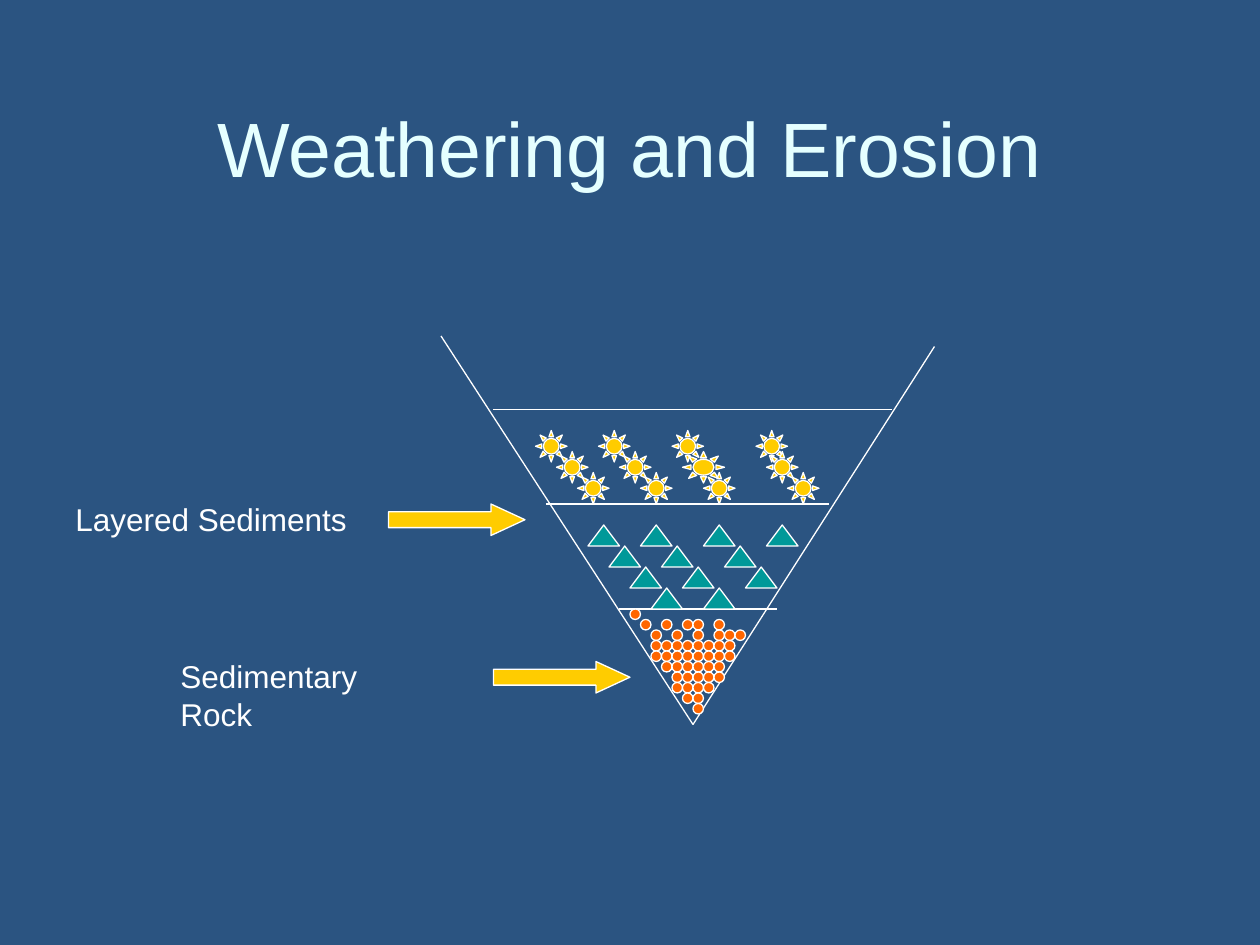
from lxml import etree
from pptx import Presentation
from pptx.dml.color import RGBColor
from pptx.enum.shapes import MSO_CONNECTOR, MSO_SHAPE
from pptx.enum.text import MSO_ANCHOR, MSO_AUTO_SIZE, PP_ALIGN
from pptx.oxml import parse_xml
from pptx.oxml.ns import qn
from pptx.util import Pt

NAVY = RGBColor(0x2B, 0x54, 0x81)
ICE = RGBColor(0xE5, 0xFF, 0xFF)
WHITE = RGBColor(0xFF, 0xFF, 0xFF)
GOLD = RGBColor(0xFF, 0xCC, 0x00)
TEAL = RGBColor(0x00, 0x99, 0x99)
ORANGE = RGBColor(0xFF, 0x66, 0x00)
LINE = MSO_CONNECTOR.STRAIGHT
SUN = MSO_SHAPE.SUN
PEAK = MSO_SHAPE.ISOSCELES_TRIANGLE
DOT = MSO_SHAPE.OVAL
ARROW = MSO_SHAPE.RIGHT_ARROW
FONT = "Arial"
STEP = 6
SHADOW = (
    '<a:effectLst xmlns:a="http://schemas.openxmlformats.org/drawingml/2006/main">'
    '<a:outerShdw blurRad="38100" dist="38100" dir="2700000" algn="tl">'
    '<a:srgbClr val="000000"/></a:outerShdw></a:effectLst>'
)

prs = Presentation()
prs.slide_width, prs.slide_height = Pt(720), Pt(540)
slide = prs.slides.add_slide(prs.slide_layouts[5])
slide.background.fill.solid()
slide.background.fill.fore_color.rgb = NAVY


def add_mark(kind, x, y, w, h, color):
    mark = slide.shapes.add_shape(kind, Pt(x), Pt(y), Pt(w), Pt(h))
    mark.shadow.inherit = False
    mark.fill.solid()
    mark.fill.fore_color.rgb = color
    mark.line.color.rgb = WHITE
    mark.line.width = Pt(0.75)
    return mark


def add_run(frame, text, size, color):
    run = frame.paragraphs[0].add_run()
    run.text = text
    run.font.size = Pt(size)
    run.font.color.rgb = color
    run.font.name = FONT
    return run


# Title with a soft text shadow
title = slide.shapes.title
title.left, title.top, title.width, title.height = Pt(36), Pt(30), Pt(648), Pt(108)
title.text_frame.vertical_anchor = MSO_ANCHOR.MIDDLE
title.text_frame.paragraphs[0].alignment = PP_ALIGN.CENTER
run = add_run(title.text_frame, "Weathering and Erosion", 44, ICE)
run.font.fill._xPr.find(qn("a:solidFill")).addnext(parse_xml(SHADOW))

# Basin walls and layer boundaries
for x1, y1, x2, y2 in (
    (252, 192, 396, 414),
    (396, 414, 534, 198),
    (354, 348, 444, 348),
    (312, 288, 474, 288),
    (282, 234, 510, 234),
):
    edge = slide.shapes.add_connector(LINE, Pt(x1), Pt(y1), Pt(x2), Pt(y2))
    edge.line.color.rgb = WHITE
    edge.line.width = Pt(0.75)
    etree.SubElement(edge._element.spPr, qn("a:effectLst"))

# Top layer: slanting strings of suns, the third with a wide one in front
for xs in ((306, 318, 330), (342, 354, 366), (384, 402), (432, 438, 450)):
    rows = (246, 258, 270) if len(xs) == 3 else (246, 270)
    for x, y in zip(xs, rows):
        add_mark(SUN, x, y, 18, 18, GOLD)
    if len(xs) == 2:
        add_mark(SUN, 390, 258, 24, 18, GOLD)

# Middle layer: rows of triangles
peaks = ((336, 366, 402, 438), (348, 378, 414), (360, 390, 426), (372, 402))
for row, xs in enumerate(peaks):
    for x in xs:
        add_mark(PEAK, x, 300 + 12 * row, 18, 12, TEAL)

# Bottom layer: grains on a square grid, columns listed per row
grains = (
    (0,),
    (1, 3, 5, 6, 8),
    (2, 4, 6, 8, 9, 10),
    range(2, 10),
    range(2, 10),
    range(3, 9),
    range(4, 9),
    range(4, 8),
    (5, 6),
    (6,),
)
for row, cols in enumerate(grains):
    for col in cols:
        add_mark(DOT, 360 + STEP * col, 348 + STEP * row, STEP, STEP, ORANGE)

# Labels with arrows
for text, x, y, w, tip_x, tip_y in (
    ("Sedimentary Rock", 96, 372, 161, 282, 378),
    ("Layered Sediments", 36, 282, 170, 222, 288),
):
    arrow = add_mark(ARROW, tip_x, tip_y, 78, 18, GOLD)
    arrow.adjustments[1] = 1.08
    label = slide.shapes.add_textbox(Pt(x), Pt(y), Pt(w), Pt(29))
    label.text_frame.word_wrap = False
    label.text_frame.auto_size = MSO_AUTO_SIZE.SHAPE_TO_FIT_TEXT
    add_run(label.text_frame, text, 18, WHITE)

prs.save("out.pptx")
